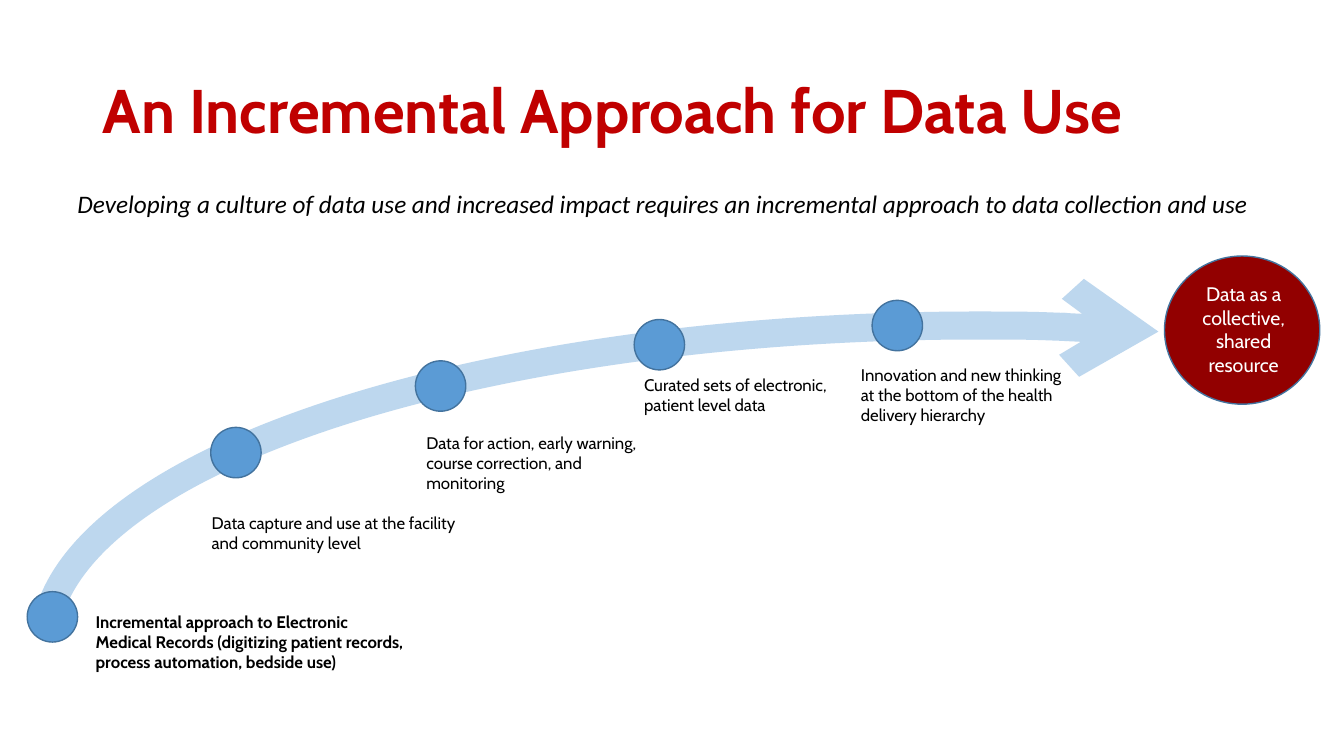
from pptx import Presentation
from pptx.dml.color import RGBColor
from pptx.enum.shapes import MSO_SHAPE
from pptx.enum.text import MSO_ANCHOR, MSO_AUTO_SIZE, PP_ALIGN
from pptx.oxml.ns import qn
from pptx.util import Inches, Pt
from lxml.etree import SubElement

COLORS = {
    "title": "C00000",
    "text": "000000",
    "light": "FFFFFF",
    "path_arrow": "BDD7EE",
    "step": "5B9BD5",
    "goal": "920000",
    "outline": "43739E",
}

STEP_SIZE = 0.5

STEPS = [
    ((0.27, 5.87), (0.85, 6.02, 3.28, 0.91), True,
     "Incremental approach to Electronic Medical Records "
     "(digitizing patient records, process automation, bedside use)"),
    ((2.09, 4.24), (2, 5.04, 2.62, 0.5), False,
     "Data capture and use at the facility and community level"),
    ((4.12, 3.58), (4.13, 4.24, 2.54, 0.71), False,
     "Data for action, early warning, course correction, and monitoring"),
    ((6.29, 3.17), (6.29, 3.67, 2.39, 0.5), False,
     "Curated sets of electronic, patient level data"),
    ((8.65, 2.98), (8.44, 3.57, 2.2, 0.91), False,
     "Innovation and new thinking at the bottom of the health delivery hierarchy"),
]


def rgb(name):
    return RGBColor.from_string(COLORS[name])


def set_attrs(obj, values):
    for name, value in values.items():
        setattr(obj, name, value)


def add_text(s, box, text, size, color="text", font="Cabin", frame=None, para=None, **style):
    tf = s.shapes.add_textbox(*map(Inches, box)).text_frame
    set_attrs(tf, {"word_wrap": True, "auto_size": MSO_AUTO_SIZE.SHAPE_TO_FIT_TEXT, **(frame or {})})
    p = tf.paragraphs[0]
    set_attrs(p, para or {})
    r = p.add_run()
    r.text = text
    set_attrs(r.font, {"name": font, "size": Pt(size), **style})
    r.font.color.rgb = rgb(color)


def add_outlined(s, kind, box, line, width, fill=None):
    sp = s.shapes.add_shape(kind, *map(Inches, box))
    sp.shadow.inherit = False
    if fill:
        sp.fill.solid()
        sp.fill.fore_color.rgb = rgb(fill)
    else:
        sp.fill.background()
    sp.line.color.rgb = rgb(line)
    sp.line.width = Pt(width)
    return sp


def add_path_arrow(s):
    sp = add_outlined(s, MSO_SHAPE.ARC, (0.44, 3.23, 18.5, 6.34), "path_arrow", 20)
    sp.adjustments[0] = 108.76
    sp.adjustments[1] = 180.04
    SubElement(sp.line._get_or_add_ln(), qn("a:tailEnd"), type="arrow")


def add_step(s, corner, label_box, bold, label):
    add_text(s, label_box, label, 12, bold=bold)
    add_outlined(s, MSO_SHAPE.OVAL, (*corner, STEP_SIZE, STEP_SIZE), "outline", 1, "step")


def add_goal(s):
    add_outlined(s, MSO_SHAPE.OVAL, (11.55, 2.54, 1.54, 1.47), "outline", 1, "goal")
    add_text(s, (11.7, 2.75, 1.27, 1.04), "Data as a collective, shared resource", 14,
             "light", para={"alignment": PP_ALIGN.CENTER})


def main():
    prs = Presentation()
    set_attrs(prs, {"slide_width": Inches(13.33), "slide_height": Inches(7.5)})
    s = prs.slides.add_slide(prs.slide_layouts[6])
    add_text(s, (0.92, 0.4, 11.5, 1.45), "An Incremental Approach for Data Use", 44, "title",
             frame={"auto_size": MSO_AUTO_SIZE.NONE, "vertical_anchor": MSO_ANCHOR.MIDDLE},
             para={"line_spacing": 0.9}, bold=True)
    add_path_arrow(s)
    for step in STEPS:
        add_step(s, *step)
    add_goal(s)
    add_text(s, (0.67, 1.82, 11.99, 0.4),
             "Developing a culture of data use and increased impact requires "
             "an incremental approach to data collection and use",
             18, font="Calibri", frame={"word_wrap": False}, italic=True)
    prs.save("out.pptx")


if __name__ == "__main__":
    main()
